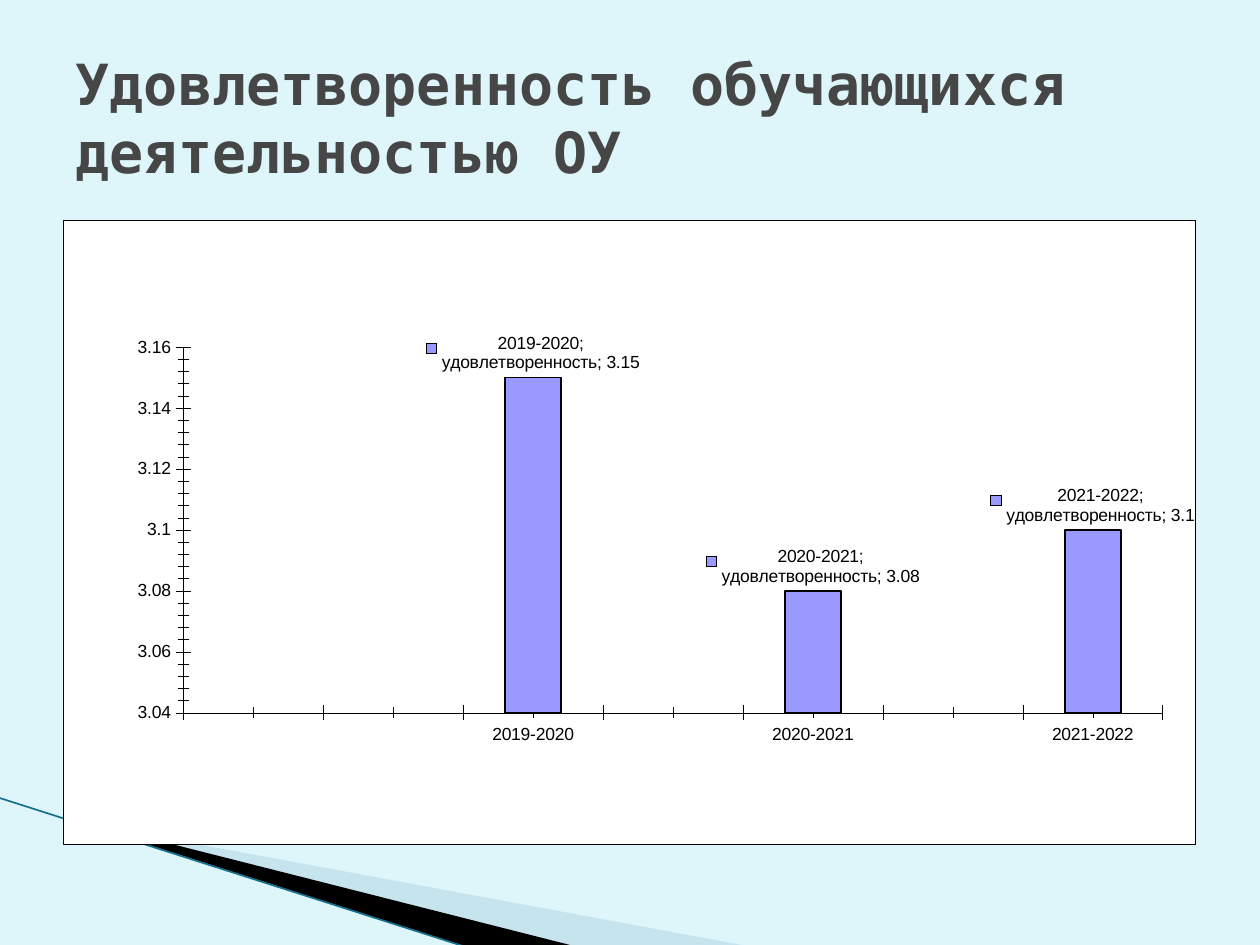
from lxml.etree import SubElement
from pptx import Presentation
from pptx.chart.data import CategoryChartData
from pptx.dml.color import RGBColor
from pptx.enum.chart import XL_CHART_TYPE as ChartType, XL_LABEL_POSITION as LabelPos
from pptx.enum.chart import XL_TICK_LABEL_POSITION as TickLabels, XL_TICK_MARK as TickMark
from pptx.enum.shapes import MSO_CONNECTOR as Connector
from pptx.enum.text import MSO_ANCHOR as Anchor, PP_ALIGN as Align
from pptx.oxml import parse_xml
from pptx.oxml.ns import nsdecls, qn
from pptx.util import Cm, Pt

BLACK = "000000"


def paint(color_format, value):
    color_format.rgb = RGBColor.from_string(value)


def fill_solid(fill, value):
    fill.solid()
    paint(fill.fore_color, value)


def draw_line(line, value, points):
    fill_solid(line.fill, value)
    line.width = Pt(points)


def set_frame(shape, left, top, width, height):
    shape.left, shape.top, shape.width, shape.height = left, top, width, height


def reframe(wedge, left, top, width, height):
    """Give a freeform a new frame while its outline stays where it is."""
    outline = wedge._element.find(".//" + qn("a:path"))
    for point in outline.iter(qn("a:pt")):
        point.set("x", str(int(point.get("x")) + wedge.left - left))
        point.set("y", str(int(point.get("y")) + wedge.top - top))
    outline.set("w", str(width))
    outline.set("h", str(height))
    set_frame(wedge, left, top, width, height)


def add_wedge(page, box, points, color, opacity=100):
    """Draw a borderless polygon through points in centimetres, framed by box."""
    corners = [(Cm(x), Cm(y)) for x, y in points]
    builder = page.shapes.build_freeform(*corners[0])
    builder.add_line_segments(corners[1:], close=True)
    wedge = builder.convert_to_shape()
    reframe(wedge, *map(Cm, box))
    wedge.shadow.inherit = False
    wedge.line.fill.background()
    fill_solid(wedge.fill, color)
    if opacity < 100:
        tint = wedge.fill._xPr.find(".//" + qn("a:srgbClr"))
        SubElement(tint, qn("a:alpha"), val=str(opacity * 1000))


def add_corner_decoration(page, left, top):
    """Draw the wedges fanning out from the left edge to the bottom edge."""
    def shift(points):
        return [(left + x, top + y) for x, y in points]

    add_wedge(page, (left + 1.98, top - 2.19, 10.57, 4.01),
              shift([(1.4, 0.46), (15.11, 3), (11.58, 3), (1.4, 0.43)]), "A0CBDC", 40)
    add_wedge(page, (left - 0.15, top, 10.57, 2.34),
              shift([(1.35, 0.4), (11.61, 3), (9.45, 3.02), (1.37, 0.43)]), BLACK)
    (x1, y1), (x2, y2) = shift([(-0.03, 0), (9.42, 3.02)])
    edge = page.shapes.add_connector(Connector.STRAIGHT, Cm(x1), Cm(y1), Cm(x2), Cm(y2))
    draw_line(edge.line, "166F8C", 0.95)
    SubElement(edge._element.spPr, qn("a:effectLst"))


def place_title(page, left, top, width, height):
    title = page.shapes.title
    set_frame(title, *map(Cm, (left, top, width, height)))
    frame = title.text_frame
    frame.text = "Удовлетворенность обучающихся деятельностью ОУ"
    frame.vertical_anchor = Anchor.MIDDLE
    frame.word_wrap = True
    para = frame.paragraphs[0]
    para.alignment = Align.LEFT
    font = para.runs[0].font
    font.name, font.size, font.bold = "DejaVu Sans Mono", Pt(32.4), True
    paint(font.color, "464646")


def set_font(font):
    font.name, font.size, font.bold = "Arial", Pt(10), False
    paint(font.color, BLACK)


def frame_chart(chart, x, y, width, height):
    """Give the chart a white bordered ground and fix its inner plot area."""
    chart._chartSpace.find(qn("c:chart")).addnext(parse_xml(
        f'<c:spPr {nsdecls("c", "a")}>'
        '<a:solidFill><a:srgbClr val="FFFFFF"/></a:solidFill>'
        f'<a:ln w="{Pt(0.25)}"><a:solidFill><a:srgbClr val="{BLACK}"/></a:solidFill></a:ln>'
        '</c:spPr>'))
    plot_area = chart._chartSpace.find(".//" + qn("c:plotArea"))
    for old in plot_area.findall(qn("c:layout")):
        plot_area.remove(old)
    plot_area.insert(0, parse_xml(
        f'<c:layout {nsdecls("c")}><c:manualLayout><c:layoutTarget val="inner"/>'
        '<c:xMode val="edge"/><c:yMode val="edge"/>'
        f'<c:x val="{x}"/><c:y val="{y}"/><c:w val="{width}"/><c:h val="{height}"/>'
        '</c:manualLayout></c:layout>'))


def label_bars(series):
    labels = series.data_labels
    labels.show_legend_key = labels.show_category_name = True
    labels.show_series_name = labels.show_value = True
    labels.position = LabelPos.OUTSIDE_END
    set_font(labels.font)
    separator = parse_xml(f'<c:separator {nsdecls("c")}>; </c:separator>')
    labels._element.find(qn("c:showBubbleSize")).addnext(separator)


def add_satisfaction_chart(page, left, top, width, height):
    data = CategoryChartData(number_format="General")
    data.categories = ["", "", "2019-2020", "", "2020-2021", "", "2021-2022"]
    data.add_series("удовлетворенность", [None, None, 3.15, None, 3.08, None, 3.1])
    chart = page.shapes.add_chart(
        ChartType.COLUMN_CLUSTERED, Cm(left), Cm(top), Cm(width), Cm(height), data).chart
    chart.has_title = chart.has_legend = False
    set_font(chart.font)
    frame_chart(chart, 0.106, 0.203, 0.865, 0.586)

    for axis in (chart.category_axis, chart.value_axis):
        axis.has_major_gridlines = False
        axis.major_tick_mark = axis.minor_tick_mark = TickMark.CROSS
        axis.tick_label_position = TickLabels.LOW
        draw_line(axis.format.line, BLACK, 0.25)
        set_font(axis.tick_labels.font)
    scale = chart.value_axis
    scale.minimum_scale, scale.maximum_scale = 3.04, 3.16
    scale.major_unit, scale.minor_unit = 0.02, 0.004

    plot = chart.plots[0]
    plot.vary_by_categories = False
    plot.gap_width = 150
    series = plot.series[0]
    fill_solid(series.format.fill, "9999FF")
    draw_line(series.format.line, BLACK, 1)
    label_bars(series)


def main():
    deck = Presentation()
    deck.slide_width, deck.slide_height = Cm(25.4), Cm(19.05)
    page = deck.slides.add_slide(deck.slide_layouts[5])
    fill_solid(page.background.fill, "DEF5FA")
    add_corner_decoration(page, 0, 16.08)
    place_title(page, 1.27, 0.76, 22.86, 3.18)
    add_satisfaction_chart(page, 1.27, 4.44, 22.86, 12.59)
    deck.save("out.pptx")


if __name__ == "__main__":
    main()
